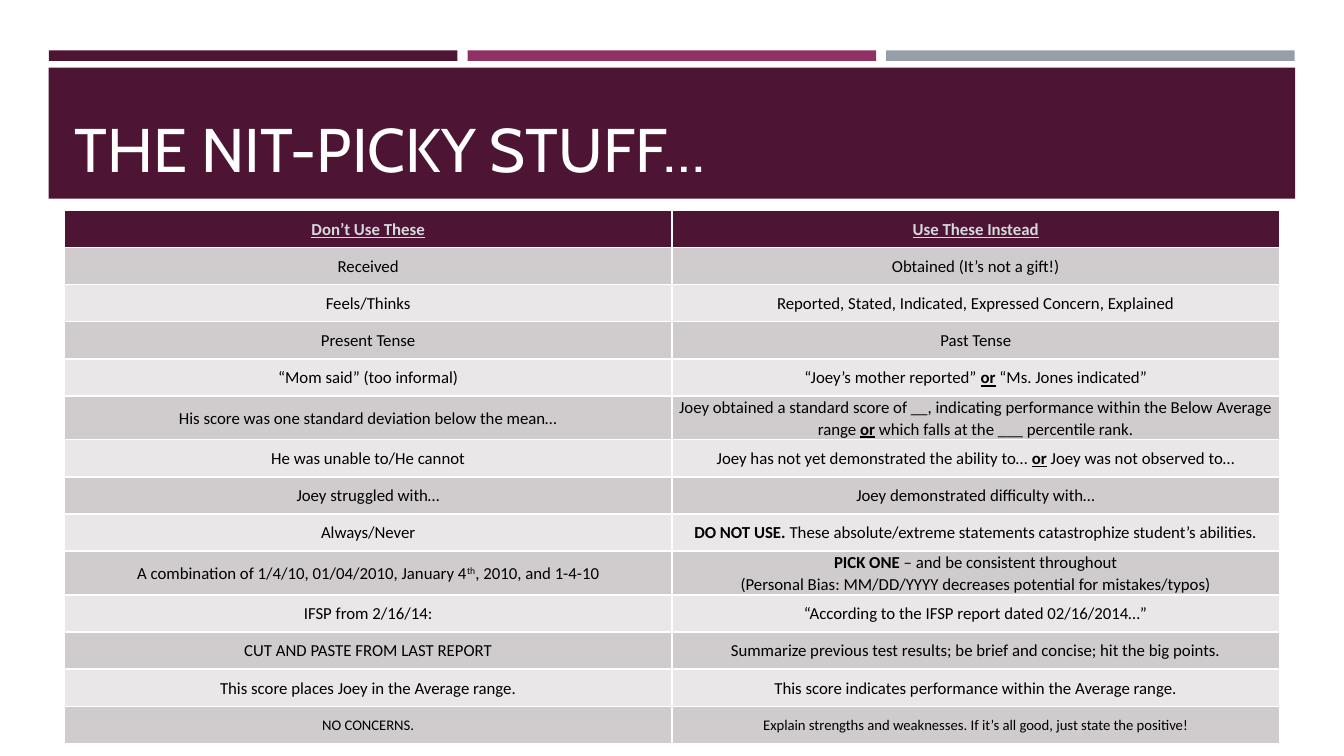
from pptx import Presentation
from pptx.dml.color import RGBColor
from pptx.enum.shapes import MSO_SHAPE
from pptx.enum.text import MSO_ANCHOR, MSO_AUTO_SIZE, PP_ALIGN
from pptx.util import Pt

COLORS = {
    "plum": "4D1434",
    "magenta": "903163",
    "slate": "969FA7",
    "white": "FFFFFF",
    "black": "000000",
    "header_text": "D5D9DC",
    "dark_band": "D0CCCE",
    "light_band": "E9E7E8",
}

# Wording pairs; text between bars is emphasised, a newline starts a paragraph
ROWS = [
    ("Don’t Use These", "Use These Instead"),
    ("Received", "Obtained (It’s not a gift!)"),
    ("Feels/Thinks", "Reported, Stated, Indicated, Expressed Concern, Explained"),
    ("Present Tense", "Past Tense"),
    ("“Mom said” (too informal)", "“Joey’s mother reported” |or| “Ms. Jones indicated”"),
    ("His score was one standard deviation below the mean…",
     "Joey obtained a standard score of __, indicating performance within the "
     "Below Average range |or| which falls at the ___ percentile rank."),
    ("He was unable to/He cannot",
     "Joey has not yet demonstrated the ability to… |or| Joey was not observed to…"),
    ("Joey struggled with…", "Joey demonstrated difficulty with…"),
    ("Always/Never",
     "|DO NOT USE.| These absolute/extreme statements catastrophize student’s abilities."),
    ("A combination of 1/4/10, 01/04/2010, January 4|th|, 2010, and 1-4-10",
     "|PICK ONE| – and be consistent throughout\n"
     "(Personal Bias: MM/DD/YYYY decreases potential for mistakes/typos)"),
    ("IFSP from 2/16/14:", "“According to the IFSP report dated 02/16/2014…”"),
    ("CUT AND PASTE FROM LAST REPORT",
     "Summarize previous test results; be brief and concise; hit the big points."),
    ("This score places Joey in the Average range.",
     "This score indicates performance within the Average range."),
    ("NO CONCERNS.",
     "Explain strengths and weaknesses. If it’s all good, just state the positive!"),
]
TALL_ROWS = (5, 9)
LAST_ROW = len(ROWS) - 1


def color(name):
    return RGBColor.from_string(COLORS[name])


def add_block(slide, left, top, width, height, fill):
    shape = slide.shapes.add_shape(
        MSO_SHAPE.RECTANGLE, Pt(left), Pt(top), Pt(width), Pt(height))
    shape.shadow.inherit = False
    shape.fill.solid()
    shape.fill.fore_color.rgb = color(fill)
    shape.line.fill.background()


presentation = Presentation()
presentation.slide_width = Pt(960)
presentation.slide_height = Pt(540)
slide = presentation.slides.add_slide(presentation.slide_layouts[5])

# Three accent bars above the title banner
for index, fill in enumerate(("plum", "magenta", "slate")):
    add_block(slide, 35 + index * 299, 36, 291.8, 7.5, fill)
add_block(slide, 34.8, 48.4, 890.4, 93.6, "plum")

# Title, brought in front of the banner
title = slide.shapes.title
title.element.getparent().append(title.element)
title.left, title.top, title.width, title.height = Pt(46), Pt(55.4), Pt(868), Pt(80)
title.text_frame.text = "THE NIT-PICKY STUFF…"
title.text_frame.auto_size = MSO_AUTO_SIZE.NONE
title.text_frame.vertical_anchor = MSO_ANCHOR.BOTTOM
paragraph = title.text_frame.paragraphs[0]
paragraph.alignment = PP_ALIGN.LEFT
font = paragraph.runs[0].font
font.name, font.size = "Cabin", Pt(44)
font.color.rgb = color("white")

# Wording table
table = slide.shapes.add_table(
    len(ROWS), 2, Pt(46), Pt(150.5), Pt(868), Pt(377)).table
for row_index, row in enumerate(ROWS):
    is_header = row_index == 0
    table.rows[row_index].height = Pt(29.5 if row_index in TALL_ROWS else 26.5)
    band = "plum" if is_header else "dark_band" if row_index % 2 else "light_band"
    for column_index, text in enumerate(row):
        cell = table.cell(row_index, column_index)
        cell.fill.solid()
        cell.fill.fore_color.rgb = color(band)
        cell.vertical_anchor = MSO_ANCHOR.MIDDLE
        cell.margin_left = cell.margin_right = Pt(5)
        cell.margin_top = cell.margin_bottom = Pt(0)
        for line_index, line in enumerate(text.split("\n")):
            text_frame = cell.text_frame
            paragraph = text_frame.add_paragraph() if line_index else text_frame.paragraphs[0]
            paragraph.alignment = PP_ALIGN.CENTER
            paragraph.line_spacing = 1.07
            for part_index, part in enumerate(line.split("|")):
                if not part:
                    continue
                emphasised = part_index % 2 == 1
                run = paragraph.add_run()
                run.text = part
                run.font.name = "Calibri"
                run.font.size = Pt(10.5 if row_index == LAST_ROW else 12)
                run.font.color.rgb = color("header_text" if is_header else "black")
                run.font.bold = is_header or (emphasised and part != "th")
                run.font.underline = is_header or (emphasised and part == "or")
                if emphasised and part == "th":
                    run._r.get_or_add_rPr().set("baseline", "30000")

presentation.save("out.pptx")
